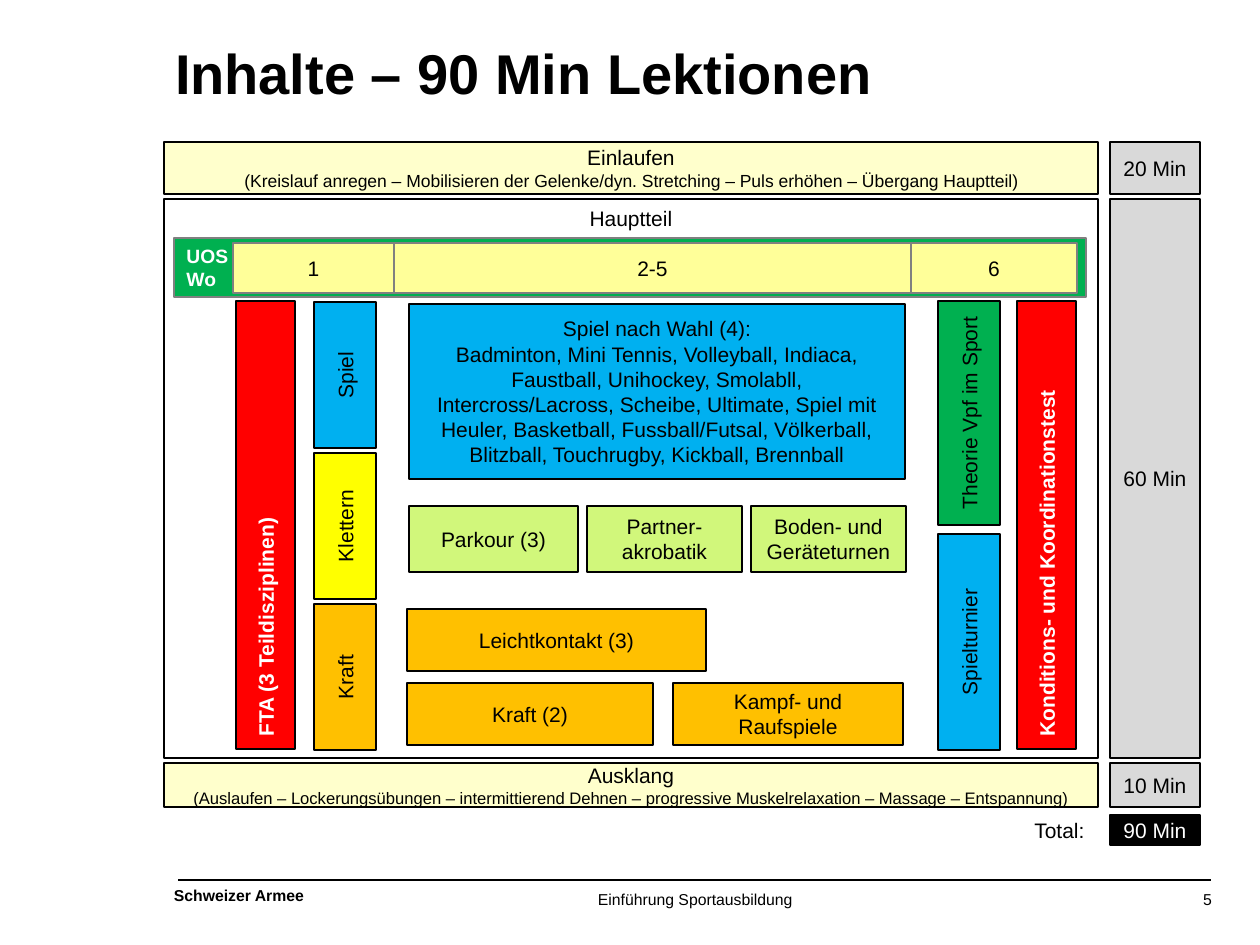
from pptx import Presentation
from pptx.dml.color import RGBColor
from pptx.enum.shapes import MSO_CONNECTOR as Connector, MSO_SHAPE as Shape
from pptx.enum.text import MSO_ANCHOR as Anchor, MSO_AUTO_SIZE as AutoSize, PP_ALIGN as Align
from pptx.oxml.ns import qn
from pptx.util import Emu, Pt
from lxml import etree

COLORS = {
    "black": "000000", "white": "FFFFFF", "grey": "808080", "silver": "D9D9D9",
    "cream": "FFFFCC", "straw": "FFFF99", "yellow": "FFFF00", "red": "FF0000",
    "green": "00B050", "lime": "D1F77B", "blue": "00B0F0", "orange": "FFC000",
}


class SlideBuilder:
    font = "Arial"
    px = 914400 / 126

    def __init__(self, deck):
        self.page = deck.slides.add_slide(deck.slide_layouts[5])

    def emu(self, *lengths):
        return [Emu(round(length * self.px)) for length in lengths]

    def color(self, name):
        return RGBColor.from_string(COLORS[name])

    def fill_text(self, box, lines, sizes=(12,), color="black", bold=False,
                  align=Align.CENTER, anchor=Anchor.MIDDLE, wrap=True, margin=None):
        frame = box.text_frame
        frame.text = lines
        frame.word_wrap = wrap
        frame.auto_size = AutoSize.NONE
        frame.vertical_anchor = anchor
        if margin is not None:
            frame.margin_left = frame.margin_right = margin
            frame.margin_top = frame.margin_bottom = margin
        for index, para in enumerate(frame.paragraphs):
            para.alignment = align
            for span in para.runs:
                span.font.name = self.font
                span.font.size = Pt(sizes[min(index, len(sizes) - 1)])
                span.font.bold = bold
                span.font.color.rgb = self.color(color)

    def title(self, bounds, words):
        box = self.page.shapes.title
        box.left, box.top, box.width, box.height = self.emu(*bounds)
        self.fill_text(box, words, (32,), bold=True, align=Align.LEFT, anchor=Anchor.TOP, margin=0)

    def text(self, bounds, words, **style):
        self.fill_text(self.page.shapes.add_textbox(*self.emu(*bounds)), words, **style)

    def block(self, bounds, words, fill=None, border="black", weight=1, **style):
        box = self.page.shapes.add_shape(Shape.RECTANGLE, *self.emu(*bounds))
        box.shadow.inherit = False
        if fill:
            box.fill.solid()
            box.fill.fore_color.rgb = self.color(fill)
        else:
            box.fill.background()
        box.line.color.rgb = self.color(border)
        box.line.width = Pt(weight)
        self.fill_text(box, words, **style)
        return box

    def upright(self, bounds, words, fill, **style):
        left, top, width, height = bounds
        shift = (height - width) / 2
        turned = (left - shift, top + shift, height, width)
        self.block(turned, words, fill, **style).rotation = 270

    def rule(self, start, end):
        line = self.page.shapes.add_connector(Connector.STRAIGHT, *self.emu(*start, *end))
        line.line.color.rgb = self.color("black")
        line.line.width = Pt(0.75)
        etree.SubElement(line._element.spPr, qn("a:effectLst"))


def main():
    deck = Presentation()
    deck.slide_width, deck.slide_height = Emu(9144000), Emu(6858000)
    slide = SlideBuilder(deck)
    slide.title((175, 39, 1028, 136), "Inhalte – 90 Min Lektionen")

    slide.block((164, 142, 934, 52), "Einlaufen\n(Kreislauf anregen – Mobilisieren der Gelenke/dyn. "
                "Stretching – Puls erhöhen – Übergang Hauptteil)", "cream", sizes=(12, 10))
    slide.block((164, 199, 934, 559), "Hauptteil", anchor=Anchor.TOP)
    slide.block((164, 763, 934, 44), "Ausklang\n(Auslaufen – Lockerungsübungen – intermittierend Dehnen – "
                "progressive Muskelrelaxation – Massage – Entspannung)", "cream", sizes=(12, 9.5))

    for top, height, words, fill, color in (
        (142, 52, "20 Min", "silver", "black"),
        (199, 559, "60 Min", "silver", "black"),
        (763, 44, "10 Min", "silver", "black"),
        (815, 30, "90 Min", "black", "white"),
    ):
        slide.block((1110, top, 90, height), words, fill, color=color)
    slide.text((1008, 815, 89, 30), "Total:", align=Align.RIGHT)

    slide.block((174, 238, 912, 59), "UOS\vWo", "green", "grey", 0.75,
                sizes=(11,), color="white", bold=True, align=Align.LEFT)
    left = 233
    for width, week in ((161, "1"), (517, "2-5"), (166, "6")):
        slide.block((left, 243, width, 50), week, "straw", "grey", 0.75)
        left += width

    for left, words in ((236, "FTA (3 Teildisziplinen)"), (1017, "Konditions- und Koordinationstest")):
        slide.upright((left, 301, 59, 448), words, "red", color="white", bold=True, align=Align.LEFT)

    first_week = (("Spiel", "blue"), ("Klettern", "yellow"), ("Kraft", "orange"))
    for index, (words, fill) in enumerate(first_week):
        slide.upright((314, 302 + 151 * index, 62, 146), words, fill)
    slide.upright((938, 301, 62, 224), "Theorie Vpf im Sport", "green")
    slide.upright((938, 534, 62, 216), "Spielturnier", "blue")

    slide.block((409, 304, 496, 175), "Spiel nach Wahl (4):\nBadminton, Mini Tennis, Volleyball, Indiaca, "
                "Faustball, Unihockey, Smolabll, Intercross/Lacross, Scheibe, Ultimate, Spiel mit Heuler, "
                "Basketball, Fussball/Futsal, Völkerball, Blitzball, Touchrugby, Kickball, Brennball", "blue")
    for left, width, words in (
        (409, 169, "Parkour (3)"),
        (587, 155, "Partner-akrobatik"),
        (751, 155, "Boden- und Geräteturnen"),
    ):
        slide.block((left, 506, width, 66), words, "lime")
    for left, top, width, words in (
        (407, 609, 299, "Leichtkontakt (3)"),
        (407, 683, 246, "Kraft (2)"),
        (673, 683, 230, "Kampf- und Raufspiele"),
    ):
        slide.block((left, top, width, 62), words, "orange")

    slide.rule((1211, 880), (178, 880))
    for bounds, words, bold, align in (
        ((174, 886, 140, 26), "Schweizer Armee", True, Align.LEFT),
        ((598, 890, 212, 54), "Einführung Sportausbildung", False, Align.LEFT),
        ((1181, 890, 31, 19), "5", False, Align.RIGHT),
    ):
        slide.text(bounds, words, sizes=(9,), bold=bold, align=align,
                   anchor=Anchor.TOP, wrap=False, margin=0)

    deck.save("out.pptx")


if __name__ == "__main__":
    main()
